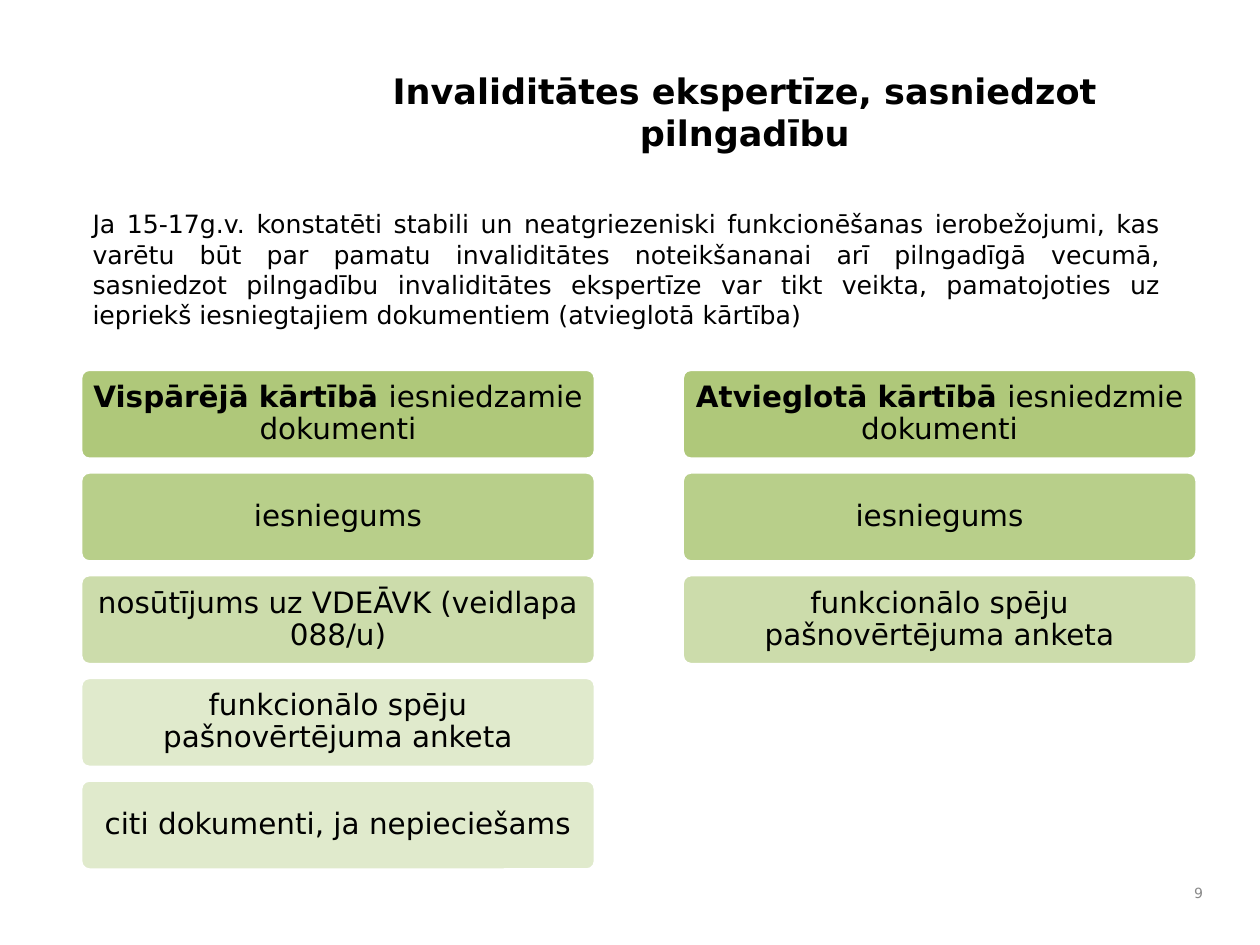
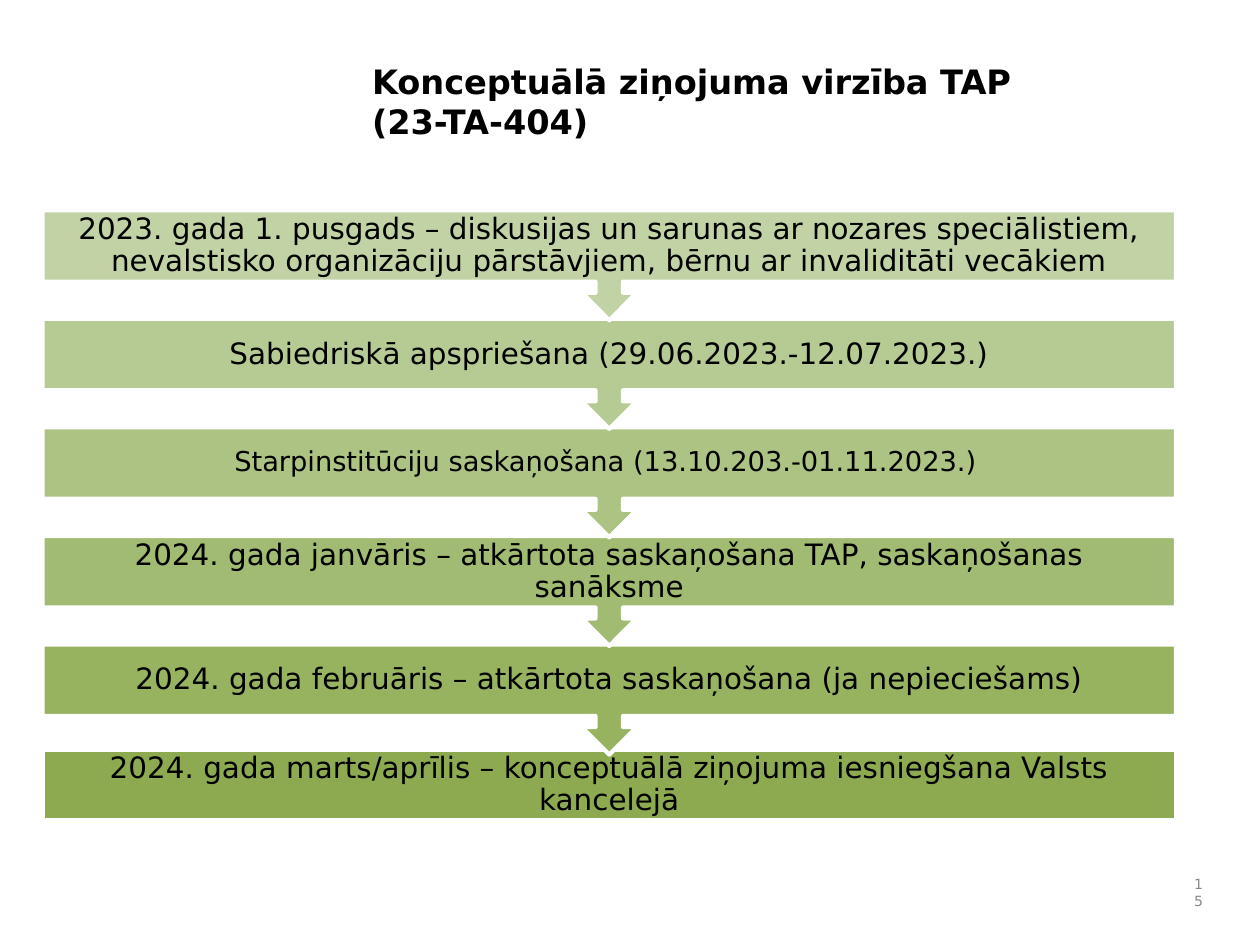
from pptx import Presentation
from pptx.dml.color import RGBColor
from pptx.enum.shapes import MSO_SHAPE as Shape
from pptx.enum.text import MSO_ANCHOR as Anchor, MSO_AUTO_SIZE as AutoSize, PP_ALIGN as Align
from pptx.oxml.ns import qn
from pptx.util import Pt
from lxml.etree import SubElement

BLACK = RGBColor(0x00, 0x00, 0x00)
WHITE = RGBColor(0xFF, 0xFF, 0xFF)
GREY = RGBColor(0x89, 0x89, 0x89)
GREEN = RGBColor(0x9B, 0xBB, 0x59)
STEP_GREENS = [RGBColor.from_string(code) for code in
               ("C1D3A5", "B6CB94", "ACC383", "A1BB72", "97B360", "8DAA51")]

TITLE = {"name": "DejaVu Sans", "bold": True}
BODY = {"name": "DejaVu Sans", "size": Pt(12)}
BOX = {"name": "DejaVu Sans", "size": Pt(14)}
NUMBER = {"name": "DejaVu Sans", "size": Pt(6.7)}


def write_text(shape, runs, style, align, anchor=Anchor.MIDDLE, color=BLACK,
               margins=(7.2, 3.6), spacing=None):
    """Fill a shape with one paragraph; runs are (text, font overrides)."""
    frame = shape.text_frame
    side, edge = map(Pt, margins)
    settings = {"word_wrap": True, "auto_size": AutoSize.NONE, "vertical_anchor": anchor,
                "margin_left": side, "margin_right": side,
                "margin_top": edge, "margin_bottom": edge}
    for name, value in settings.items():
        setattr(frame, name, value)
    paragraph = frame.paragraphs[0]
    paragraph.alignment = align
    paragraph.line_spacing = spacing
    for text, overrides in runs:
        lines = text.split("\n")
        for index, line in enumerate(lines):
            run = paragraph.add_run()
            run.text = line
            for name, value in {**style, **overrides}.items():
                setattr(run.font, name, value)
            run.font.color.rgb = color
            if index < len(lines) - 1:
                paragraph.add_line_break()


def add_box(slide, kind, left, top, width, height, color):
    """Add a white-outlined box with a solid fill."""
    shape = slide.shapes.add_shape(kind, Pt(left), Pt(top), Pt(width), Pt(height))
    shape.shadow.inherit = False
    shape.fill.solid()
    shape.fill.fore_color.rgb = color
    shape.line.color.rgb = WHITE
    shape.line.width = Pt(2)
    return shape


presentation = Presentation()
presentation.slide_width, presentation.slide_height = Pt(600), Pt(450)

# Titles and slide numbers
headings = [
    {"text": "Invaliditātes ekspertīze, sasniedzot pilngadību", "size": 16.7, "number": "9",
     "box": (139, 25.2, 431.3, 56.2), "align": Align.CENTER, "anchor": Anchor.MIDDLE},
    {"text": "Konceptuālā ziņojuma virzība TAP\n(23-TA-404)", "size": 16, "number": "15",
     "box": (170, 25.2, 400.3, 67.7), "align": Align.LEFT, "anchor": Anchor.TOP},
]
slides = []
for heading in headings:
    slide = presentation.slides.add_slide(presentation.slide_layouts[5])
    title = slide.shapes.title
    title.left, title.top, title.width, title.height = map(Pt, heading["box"])
    write_text(title, [(heading["text"], {"size": Pt(heading["size"])})], TITLE,
               heading["align"], heading["anchor"])
    number = slide.shapes.add_textbox(Pt(560), Pt(415), Pt(20), Pt(20))
    write_text(number, [(heading["number"], {})], NUMBER, Align.RIGHT, color=GREY)
    slides.append(slide)
documents_slide, schedule_slide = slides

# Introduction above the document lists
introduction = documents_slide.shapes.add_textbox(Pt(37), Pt(96.5), Pt(523), Pt(63.4))
write_text(introduction, [(
    "Ja 15-17g.v. konstatēti stabili un neatgriezeniski funkcionēšanas ierobežojumi, "
    "kas varētu būt par pamatu invaliditātes noteikšananai arī pilngadīgā vecumā, "
    "sasniedzot pilngadību invaliditātes ekspertīze var tikt veikta, pamatojoties uz "
    "iepriekš iesniegtajiem dokumentiem (atvieglotā kārtība)", {})], BODY, Align.JUSTIFY)

# Two columns of documents, fading downwards
columns = [
    [[("Vispārējā kārtībā ", {"bold": True}), ("iesniedzamie dokumenti", {})],
     [("iesniegums", {})],
     [("nosūtījums uz VDEĀVK (veidlapa 088/u)", {})],
     [("funkcionālo spēju pašnovērtējuma anketa", {})],
     [("citi dokumenti, ja nepieciešams", {})]],
    [[("Atvieglotā kārtībā ", {"bold": True}), ("iesniedzmie dokumenti", {})],
     [("iesniegums", {})],
     [("funkcionālo spēju pašnovērtējuma anketa", {})]],
]
OPACITIES = (80, 70, 50, 30, 30)
for column, documents in enumerate(columns):
    for row, (runs, opacity) in enumerate(zip(documents, OPACITIES)):
        card = add_box(documents_slide, Shape.ROUNDED_RECTANGLE, 38.2 + column * 286.5,
                       175.7 + row * 48.9, 245.5, 43.2, GREEN)
        card.adjustments[0] = 0.1
        fill_color = card._element.spPr.find(qn("a:solidFill"))[0]
        SubElement(fill_color, qn("a:alpha")).set("val", str(opacity * 1000))
        write_text(card, runs, BOX, Align.CENTER, margins=(4.2, 4.2), spacing=0.9)

# Schedule steps, drawn from the last so that each arrow lies over the next step
steps = [
    ("2023. gada 1. pusgads – diskusijas un sarunas ar nozares speciālistiem, "
     "nevalstisko organizāciju pārstāvjiem, bērnu ar invaliditāti vecākiem", 14),
    ("Sabiedriskā apspriešana (29.06.2023.-12.07.2023.)", 14),
    ("Starpinstitūciju saskaņošana (13.10.203.-01.11.2023.) ", 13),
    ("2024. gada janvāris – atkārtota saskaņošana TAP, saskaņošanas sanāksme", 14),
    ("2024. gada februāris – atkārtota saskaņošana (ja nepieciešams)", 14),
    ("2024. gada marts/aprīlis – konceptuālā ziņojuma iesniegšana Valsts kancelejā", 14),
]
LAST = len(steps) - 1
for index in range(LAST, -1, -1):
    text, size = steps[index]
    if index == LAST:
        kind, top, height = Shape.RECTANGLE, 357, 33.8
    else:
        kind, top, height = Shape.DOWN_ARROW_CALLOUT, 100.1 + index * 51.7, 52.4
    step = add_box(schedule_slide, kind, 20.3, top, 539.7, height, STEP_GREENS[index])
    write_text(step, [(text, {"size": Pt(size)})], BOX, Align.CENTER,
               margins=(8, 0), spacing=0.9)

presentation.save("out.pptx")
